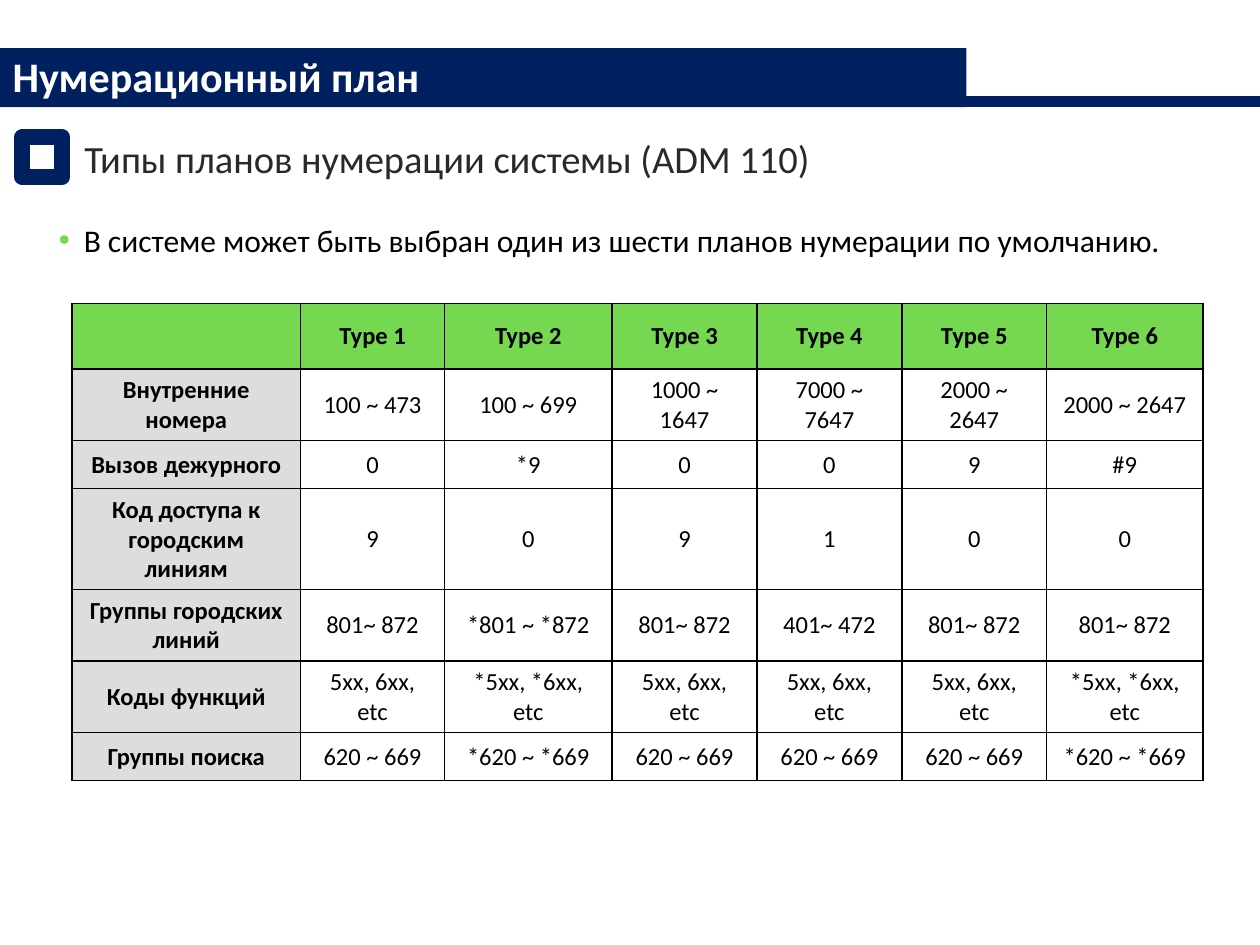
from lxml.etree import SubElement
from pptx import Presentation
from pptx.dml.color import RGBColor
from pptx.enum.shapes import MSO_CONNECTOR as CONN, MSO_SHAPE as SHAPE
from pptx.enum.text import MSO_ANCHOR as ANCHOR, MSO_AUTO_SIZE as AUTO, PP_ALIGN as ALIGN
from pptx.oxml.ns import qn
from pptx.util import Cm, Pt

# Content
TITLE = "Нумерационный план"
SUBTITLE = "Типы планов нумерации системы (ADM 110)"
BULLET = "В системе может быть выбран один из шести планов нумерации по умолчанию."
ROWS = [
    ["", "Type 1", "Type 2", "Type 3", "Type 4", "Type 5", "Type 6"],
    ["Внутренние номера", "100 ~ 473", "100 ~ 699", "1000 ~ 1647",
     "7000 ~ 7647", "2000 ~ 2647", "2000 ~ 2647"],
    ["Вызов дежурного", "0", "*9", "0", "0", "9", "#9"],
    ["Код доступа к городским линиям", "9", "0", "9", "1", "0", "0"],
    ["Группы городских линий", "801~ 872", "*801 ~ *872", "801~ 872",
     "401~ 472", "801~ 872", "801~ 872"],
    ["Коды функций", "5xx, 6xx, etc", "*5xx, *6xx, etc", "5xx, 6xx, etc",
     "5xx, 6xx, etc", "5xx, 6xx, etc", "*5xx, *6xx, etc"],
    ["Группы поиска", "620 ~ 669", "*620 ~ *669", "620 ~ 669",
     "620 ~ 669", "620 ~ 669", "*620 ~ *669"],
]
COL_WIDTHS = [4.61, 2.9, 3.38, 2.92, 2.92, 2.92, 3.15]
ROW_HEIGHTS = [1.32, 1.07, 0.97, 0.86, 0.97, 0.94, 0.97]
NAVY, GREEN, GREY, BLACK, WHITE = "002060", "76D750", "DDDDDD", "000000", "FFFFFF"


def rgb(value):
    return RGBColor.from_string(value)


def add_run(p, text, size, color, bold=False):
    r = p.add_run()
    r.text = text
    r.font.name, r.font.size, r.font.bold = "Calibri", Pt(size), bold
    r.font.color.rgb = rgb(color)


def add_borders(cell):
    tc_pr = cell._tc.get_or_add_tcPr()
    for side in ("lnL", "lnR", "lnT", "lnB"):
        ln = SubElement(tc_pr, qn(f"a:{side}"), w=str(Pt(1)))
        fill = SubElement(ln, qn("a:solidFill"))
        SubElement(fill, qn("a:srgbClr"), val=BLACK)


prs = Presentation()
prs.slide_width, prs.slide_height = Cm(25.4), Cm(19.05)
s = prs.slides.add_slide(prs.slide_layouts[5])

# Title banner and the rule beside it
title = s.shapes.title
title.left, title.top, title.width, title.height = Cm(0), Cm(0.97), Cm(19.48), Cm(1.19)
title.fill.solid()
title.fill.fore_color.rgb = rgb(NAVY)
tf = title.text_frame
tf.auto_size, tf.vertical_anchor = AUTO.NONE, ANCHOR.BOTTOM
tf.paragraphs[0].alignment = ALIGN.LEFT
add_run(tf.paragraphs[0], TITLE, 24, WHITE, bold=True)

rule = s.shapes.add_connector(CONN.STRAIGHT, Cm(16.71), Cm(2.05), Cm(25.4), Cm(2.05))
rule.line.color.rgb = rgb(NAVY)
rule.line.width = Pt(6)
SubElement(rule._element.spPr, qn("a:effectLst"))

# Subtitle with its square marker
marker = s.shapes.add_shape(SHAPE.RECTANGLE, Cm(0.45), Cm(2.77), Cm(0.8), Cm(0.8))
marker.shadow.inherit = False
marker.fill.background()
marker.line.color.rgb = rgb(NAVY)
marker.line.width = Pt(9.25)

subtitle = s.shapes.add_textbox(Cm(1.45), Cm(2.59), Cm(15.29), Cm(1.19))
tf = subtitle.text_frame
tf.word_wrap, tf.auto_size = False, AUTO.SHAPE_TO_FIT_TEXT
add_run(tf.paragraphs[0], SUBTITLE, 22, "292929")

# Bullet line
box = s.shapes.add_textbox(Cm(0.94), Cm(4.22), Cm(23.85), Cm(1.22))
tf = box.text_frame
tf.word_wrap = True
p = tf.paragraphs[0]
p.line_spacing = 1.15
add_run(p, BULLET, 18, BLACK)
p_pr = p._p.get_or_add_pPr()
p_pr.set("marL", str(Cm(0.5)))
p_pr.set("indent", str(Cm(-0.5)))
SubElement(SubElement(p_pr, qn("a:buClr")), qn("a:srgbClr"), val=GREEN)
SubElement(p_pr, qn("a:buFont"), typeface="Arial")
SubElement(p_pr, qn("a:buChar"), char="•")

# Numbering plan table
table = s.shapes.add_table(len(ROWS), len(COL_WIDTHS), Cm(1.45), Cm(6.12),
                           Cm(sum(COL_WIDTHS)), Cm(sum(ROW_HEIGHTS))).table
table.first_row = table.horz_banding = False
for column, width in zip(table.columns, COL_WIDTHS):
    column.width = Cm(width)
for row, height in zip(table.rows, ROW_HEIGHTS):
    row.height = Cm(height)

for i, values in enumerate(ROWS):
    for j, text in enumerate(values):
        cell = table.cell(i, j)
        add_borders(cell)
        header = i == 0 or j == 0
        if header:
            cell.fill.solid()
            cell.fill.fore_color.rgb = rgb(GREEN if i == 0 else GREY)
        else:
            cell.fill.background()
        cell.vertical_anchor = ANCHOR.MIDDLE
        p = cell.text_frame.paragraphs[0]
        p.alignment = ALIGN.CENTER
        if text:
            add_run(p, text, 14, BLACK, bold=header)

prs.save("out.pptx")
